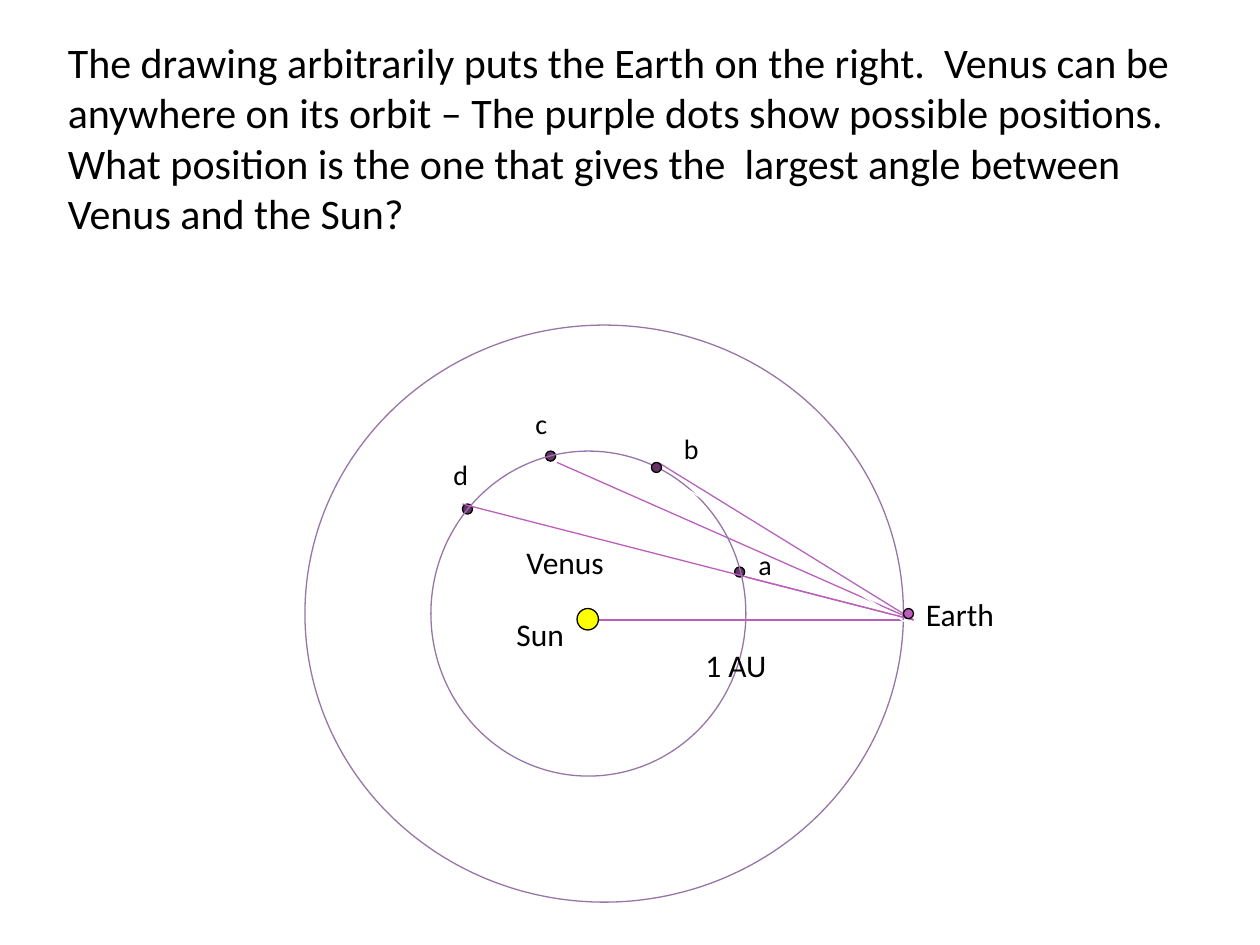
from lxml import etree
from pptx import Presentation
from pptx import util as u
from pptx.dml.color import RGBColor
from pptx.enum import shapes, text
from pptx.oxml.ns import qn

COLORS = {
    "text": "000000", "outline": "000000", "venus": "663366", "earth": "BC5FBC",
    "sun": "FFFF00", "orbit": "9875A7", "sight": "BC5FBC", "sight_b": "B465BB",
    "gap": "FFFFFF",
}
LINE_WIDTH = u.Pt(0.75)
DOT = 0.08

prs = Presentation()
prs.slide_width, prs.slide_height = u.Inches(10), u.Inches(7.5)
s = prs.slides.add_slide(prs.slide_layouts[6])


def add_ellipse(x, y, w, h, line, fill=None):
    sp = s.shapes.add_shape(shapes.MSO_SHAPE.OVAL, *map(u.Inches, (x, y, w, h)))
    sp.shadow.inherit = False
    if fill:
        sp.fill.solid()
        sp.fill.fore_color.rgb = RGBColor.from_string(COLORS[fill])
    else:
        sp.fill.background()
    sp.line.color.rgb = RGBColor.from_string(COLORS[line])
    sp.line.width = LINE_WIDTH


def add_line(x1, y1, x2, y2, color):
    c = s.shapes.add_connector(shapes.MSO_CONNECTOR.STRAIGHT,
                               *map(u.Inches, (x1, y1, x2, y2)))
    c.line.color.rgb = RGBColor.from_string(COLORS[color])
    c.line.width = LINE_WIDTH
    etree.SubElement(c._element.spPr, qn("a:effectLst"))


# Distance from the Sun to the Earth
add_line(4.75, 4.92, 7.17, 4.92, "sight")

# Venus positions that lie beneath its orbit
for x, y in [(5.83, 4.5), (3.67, 4), (4.33, 3.58)]:
    add_ellipse(x, y, DOT, DOT, "outline", "venus")

# Lines of sight from the Earth to a, c and b
for x, y, color in [(5.92, 4.58, "sight"), (4.42, 3.67, "sight"), (5.24, 3.68, "sight_b")]:
    add_line(x, y, 7.25, 4.92, color)

# Orbits of the Earth and Venus, then the Sun
add_ellipse(2.42, 2.58, 4.75, 4.58, "orbit")
add_ellipse(3.42, 3.58, 2.5, 2.58, "orbit")
add_ellipse(4.58, 4.83, 0.17, 0.17, "outline", "sun")

# White line cutting the orbits, with b and the line of sight to d above it
add_line(5.4, 3.85, 7.42, 5.08, "gap")
add_ellipse(5.17, 3.67, DOT, DOT, "outline", "venus")
add_line(3.67, 4, 7.25, 4.92, "sight")
add_ellipse(7.17, 4.83, DOT, DOT, "outline", "earth")

QUESTION = ("The drawing arbitrarily puts the Earth on the right.  Venus can be anywhere "
            "on its orbit – The purple dots show possible positions.  What position is the "
            "one that gives the  largest angle between Venus and the Sun?")
NAME, LETTER = (1.08, 0.4, 18), (0.38, 0.37, 16)
labels = [
    ("1 AU", 5.5, 5.08, *NAME),
    ("Earth", 7.25, 4.67, *NAME),
    ("Sun", 4, 4.83, *NAME),
    ("Venus", 4.08, 4.26, *NAME),
    ("a", 5.92, 4.3, *LETTER),
    ("b", 5.33, 3.38, *LETTER),
    ("c", 4.15, 3.18, *LETTER),
    ("d", 3.5, 3.58, *LETTER),
    (QUESTION, 0.44, 0.24, 9.23, 1.72, 24),
]
for wording, x, y, w, h, size in labels:
    tf = s.shapes.add_textbox(*map(u.Inches, (x, y, w, h))).text_frame
    tf.word_wrap = True
    tf.auto_size = text.MSO_AUTO_SIZE.SHAPE_TO_FIT_TEXT
    r = tf.paragraphs[0].add_run()
    r.text = wording
    for key, value in {"name": "Calibri", "size": u.Pt(size)}.items():
        setattr(r.font, key, value)
    r.font.color.rgb = RGBColor.from_string(COLORS["text"])

prs.save("out.pptx")
